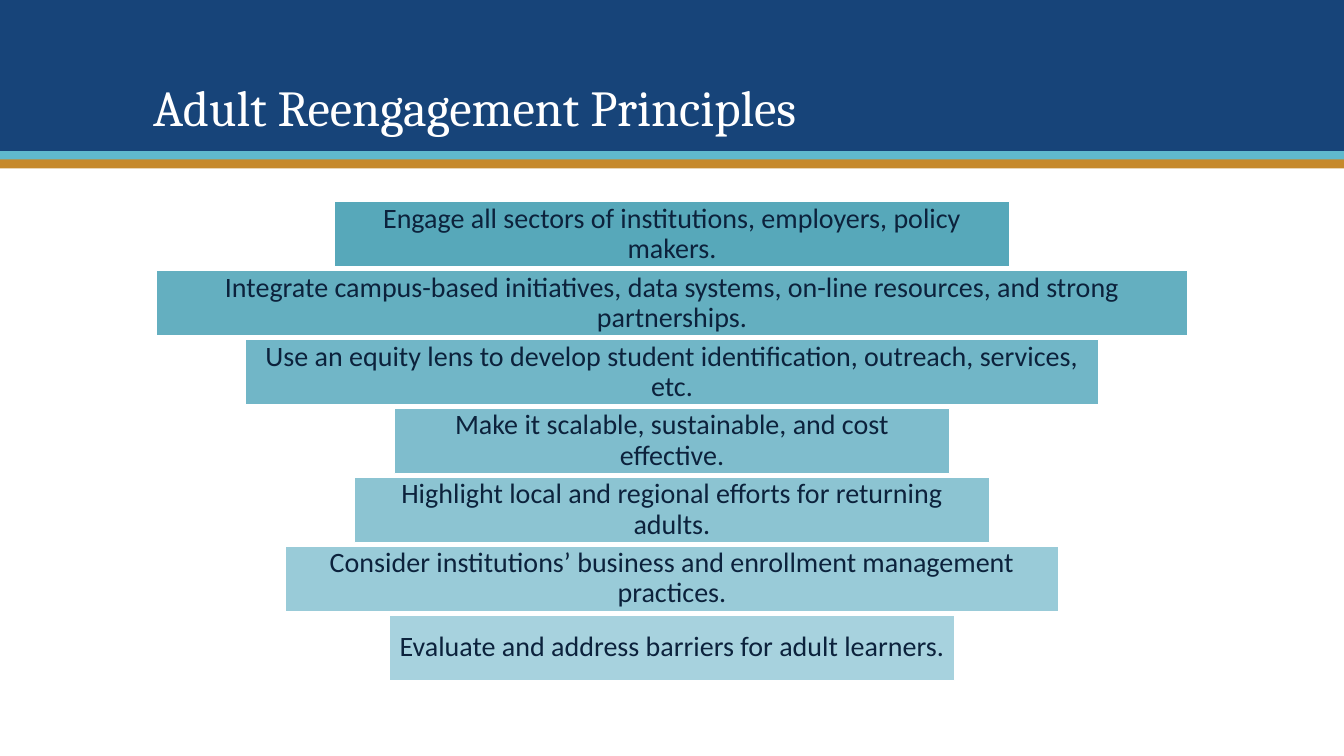
from pptx import Presentation
from pptx.dml.color import RGBColor
from pptx.enum.shapes import MSO_SHAPE
from pptx.enum.text import MSO_ANCHOR, PP_ALIGN
from pptx.util import Inches, Pt

RECT = MSO_SHAPE.RECTANGLE
BOTTOM, MIDDLE = MSO_ANCHOR.BOTTOM, MSO_ANCHOR.MIDDLE
LEFT, CENTER = PP_ALIGN.LEFT, PP_ALIGN.CENTER

SLIDE_W, SLIDE_H = 13.33, 7.5
COLORS = {
    "white": "FFFFFF", "text": "0C223C",
    "navy": "174479", "aqua": "60B9CD", "gold": "C6892B",
    "bar1": "57A8BA", "bar2": "64AFC0", "bar3": "71B6C7", "bar4": "7FBDCD",
    "bar5": "8CC4D2", "bar6": "99CBD8", "bar7": "A7D2DE",
}
HEADER_BANDS = [(0, 1.5, "navy"), (1.5, 0.09, "aqua"), (1.58, 0.09, "gold")]
BAR_TOP, BAR_H, BAR_PITCH = 2, 0.65, 4.1 / 6
PRINCIPLES = [
    (6.69, "Engage all sectors of institutions, employers, policy makers."),
    (10.22, "Integrate campus-based initiatives, data systems, on-line resources, "
            "and strong partnerships."),
    (8.46, "Use an equity lens to develop student identification, outreach, services, etc."),
    (5.51, "Make it scalable, sustainable, and cost effective."),
    (6.3, "Highlight local and regional efforts for returning adults."),
    (7.68, "Consider institutions’ business and enrollment management practices."),
    (5.61, "Evaluate and address barriers for adult learners."),
]


class SlideBuilder:
    title_font = {"name": "Cambria", "size": Pt(36)}
    body_font = {"name": "Calibri", "size": Pt(20)}
    title_frame = {"word_wrap": True, "vertical_anchor": BOTTOM}
    bar_frame = {"word_wrap": True, "vertical_anchor": MIDDLE,
                 "margin_left": Inches(0.07), "margin_right": Inches(0.07),
                 "margin_top": Inches(0.06), "margin_bottom": Inches(0.06)}

    def __init__(self, slide):
        self.slide = slide

    def color(self, name):
        return RGBColor.from_string(COLORS[name])

    def rect(self, x, y, w, h, fill, line=None):
        sp = self.slide.shapes.add_shape(RECT, Inches(x), Inches(y), Inches(w), Inches(h))
        sp.shadow.inherit = False
        sp.fill.solid()
        sp.fill.fore_color.rgb = self.color(fill)
        if line:
            sp.line.color.rgb = self.color(line)
            sp.line.width = Pt(1)
        else:
            sp.line.fill.background()
        return sp

    def set_text(self, sp, text, frame, font, color, align):
        tf = sp.text_frame
        for key, value in frame.items():
            setattr(tf, key, value)
        p = tf.paragraphs[0]
        p.alignment = align
        p.line_spacing = 0.9
        r = p.add_run()
        r.text = text
        for key, value in font.items():
            setattr(r.font, key, value)
        r.font.color.rgb = self.color(color)

    def title(self, x, y, w, h, text):
        sp = self.slide.shapes.add_textbox(Inches(x), Inches(y), Inches(w), Inches(h))
        self.set_text(sp, text, self.title_frame, self.title_font, "white", LEFT)

    def centered_bar(self, y, w, text, fill):
        sp = self.rect((SLIDE_W - w) / 2, y, w, BAR_H, fill, "white")
        self.set_text(sp, text, self.bar_frame, self.body_font, "text", CENTER)


def main():
    prs = Presentation()
    prs.slide_width, prs.slide_height = Inches(SLIDE_W), Inches(SLIDE_H)
    s = SlideBuilder(prs.slides.add_slide(prs.slide_layouts[6]))

    for y, h, fill in HEADER_BANDS:
        s.rect(0, y, SLIDE_W, h, fill)
    s.title(1.42, 0.28, 10.5, 1.13, "Adult Reengagement Principles")
    for i, (w, text) in enumerate(PRINCIPLES):
        s.centered_bar(BAR_TOP + i * BAR_PITCH, w, text, f"bar{i + 1}")

    prs.save("out.pptx")


if __name__ == "__main__":
    main()
